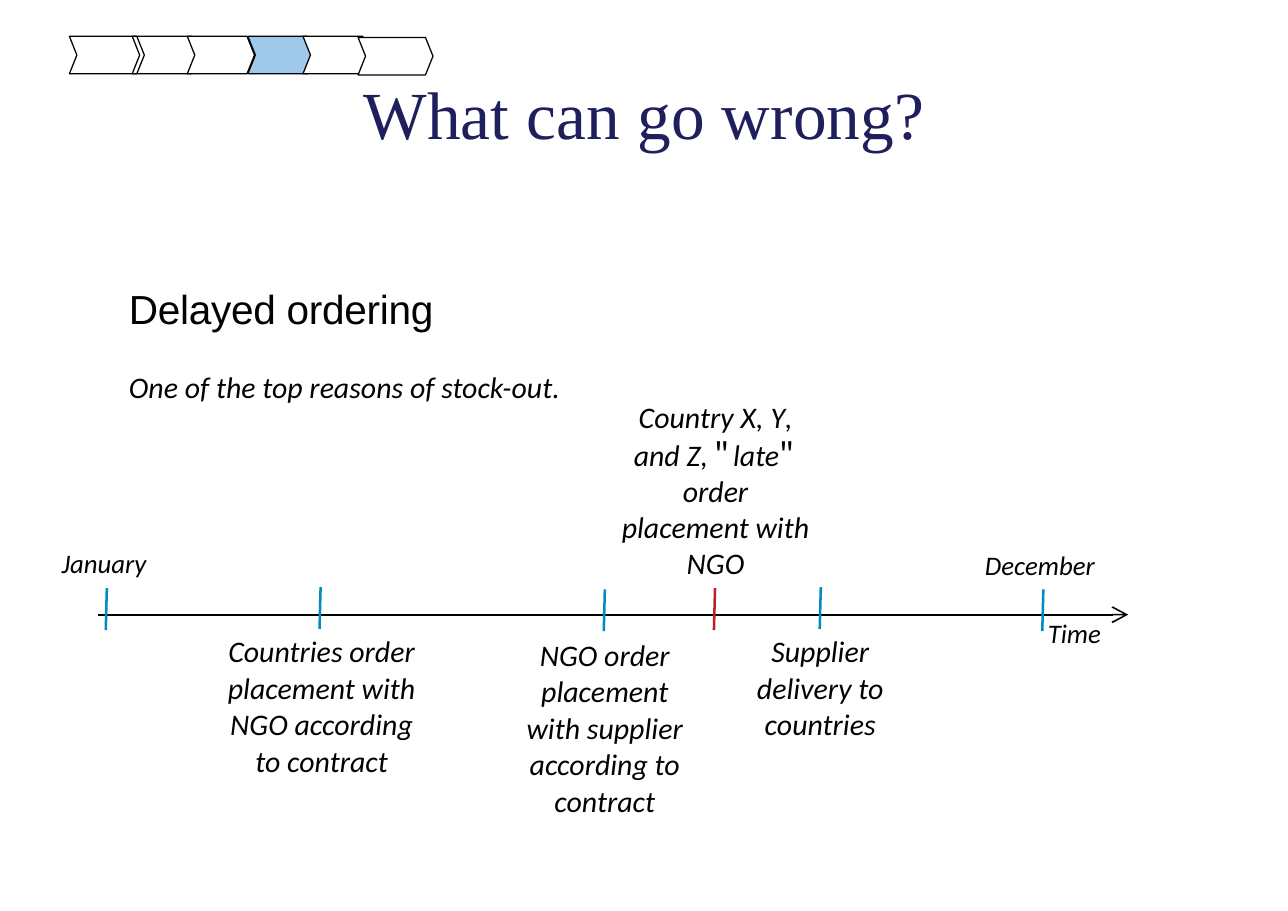
from pptx import Presentation
from pptx.dml.color import RGBColor
from pptx.enum.shapes import MSO_CONNECTOR as Connector, MSO_SHAPE as Shape
from pptx.enum.text import MSO_ANCHOR as Anchor, MSO_AUTO_SIZE as AutoSize, PP_ALIGN as Align
from pptx.oxml.ns import qn
from pptx.util import Inches, Pt
from lxml import etree

COLORS = {
    "title": "1F1F5D",
    "ink": "010202",
    "planned": "008CBE",
    "late": "BE1F25",
    "current": "A0C8EB",
    "white": "FFFFFF",
}
BODY_FONT = "Calibri"
QUOTE_FONT = "Noto Sans CJK KR"


def color(name):
    return RGBColor.from_string(COLORS[name])


def style_font(font, size, name=BODY_FONT, italic=True, ink="ink"):
    font.size = Pt(size)
    font.name = name
    font.italic = italic
    font.color.rgb = color(ink)


def set_spacing(run, points):
    run.font._element.set("spc", str(round(points * 100)))


def clear_frame(frame):
    frame.margin_left = frame.margin_right = frame.margin_top = frame.margin_bottom = 0
    frame.word_wrap = True
    frame.auto_size = AutoSize.NONE


def add_text_box(slide, box, align=Align.LEFT, line_spacing=1.0):
    frame = slide.shapes.add_textbox(*map(Inches, box)).text_frame
    clear_frame(frame)
    paragraph = frame.paragraphs[0]
    paragraph.alignment = align
    paragraph.line_spacing = line_spacing
    return paragraph


def add_label(slide, text, box, size, font=BODY_FONT, italic=True, spacing=0):
    paragraph = add_text_box(slide, box)
    run = paragraph.add_run()
    run.text = text
    set_spacing(run, spacing)
    style_font(paragraph.font, size, font, italic)


def add_event(slide, text, box):
    paragraph = add_text_box(slide, box, Align.CENTER, 1.02)
    paragraph.text = text
    style_font(paragraph.font, 19.5)


def add_late_event(slide, box):
    paragraph = add_text_box(slide, box, Align.CENTER)
    pieces = [("Country X, ", 0), ("Y", -1.9), (", and Z, ", 0), ('"', 1.9),
              ("late", 0), ('" ', 1.9), ("order placement with NGO", 0)]
    for text, spacing in pieces:
        run = paragraph.add_run()
        run.text = text
        set_spacing(run, spacing)
        if '"' in text:
            style_font(run.font, 21, QUOTE_FONT, italic=False)
        else:
            style_font(run.font, 19.5)


def add_line(slide, start, end, ink, width):
    line = slide.shapes.add_connector(Connector.STRAIGHT, *map(Inches, start + end))
    line.line.color.rgb = color(ink)
    line.line.width = Pt(width)
    etree.SubElement(line._element.spPr, qn("a:effectLst"))
    return line


def add_time_axis(slide):
    axis = add_line(slide, (0.89, 5.58), (10.24, 5.58), "ink", 1.1)
    etree.SubElement(axis.line._get_or_add_ln(), qn("a:tailEnd"),
                     type="arrow", w="lg", len="lg")


def add_tick(slide, x, top, ink="planned"):
    add_line(slide, (x + 0.01, top), (x, top + 0.38), ink, 1.65)


def add_step(slide, left, top, width, fill):
    step = slide.shapes.add_shape(Shape.CHEVRON, *map(Inches, (left, top, width, 0.34)))
    step.adjustments[0] = 0.2
    step.shadow.inherit = False
    if fill:
        step.fill.solid()
        step.fill.fore_color.rgb = color(fill)
    else:
        step.fill.background()
    step.line.color.rgb = color("ink")
    step.line.width = Pt(0.83)


def add_title(slide, text):
    title = slide.shapes.title
    title.left, title.top, title.width, title.height = map(Inches, (0.59, 0.65, 10.52, 0.74))
    frame = title.text_frame
    clear_frame(frame)
    frame.vertical_anchor = Anchor.MIDDLE
    heading = frame.paragraphs[0]
    heading.alignment = Align.CENTER
    run = heading.add_run()
    run.text = text
    set_spacing(run, 0.1)
    style_font(heading.font, 44, "Times New Roman", False, "title")


def main():
    deck = Presentation()
    deck.slide_width, deck.slide_height = Inches(11.69), Inches(8.27)
    slide = deck.slides.add_slide(deck.slide_layouts[5])

    # Headings
    add_title(slide, "What can go wrong?")
    add_label(slide, "Delayed ordering", (1.17, 2.58, 2.82, 0.45), 26.5, "Arial", False, -0.2)
    add_label(slide, "One of the top reasons of stock-out.", (1.17, 3.35, 4.02, 0.35), 19.5)

    # Timeline
    add_time_axis(slide)
    for text, box in [("Time", (9.51, 5.6, 0.51, 0.32)),
                      ("January", (0.56, 4.96, 0.8, 0.32)),
                      ("December", (8.94, 4.98, 1.03, 0.32))]:
        add_label(slide, text, box, 17.5)
    for x, top in [(0.96, 5.34), (2.9, 5.33), (5.48, 5.35), (7.44, 5.33), (9.46, 5.35)]:
        add_tick(slide, x, top)
    add_tick(slide, 6.48, 5.34, "late")

    # Events
    add_event(slide, "Countries order placement with NGO according to contract",
              (2.04, 5.74, 1.76, 1.36))
    add_event(slide, "NGO order placement with supplier according to contract",
              (4.76, 5.77, 1.46, 1.69))
    add_event(slide, "Supplier delivery to countries", (6.85, 5.74, 1.19, 1.03))
    add_late_event(slide, (5.62, 3.62, 1.75, 1.68))

    # Process steps, with the current one highlighted
    for step in [(0.63, 0.33, 0.68, None), (1.2, 0.33, 0.61, None),
                 (1.7, 0.33, 0.61, "white"), (2.25, 0.33, 0.61, "current"),
                 (2.75, 0.33, 0.61, "white"), (3.25, 0.34, 0.68, "white")]:
        add_step(slide, *step)

    deck.save("out.pptx")


if __name__ == "__main__":
    main()
